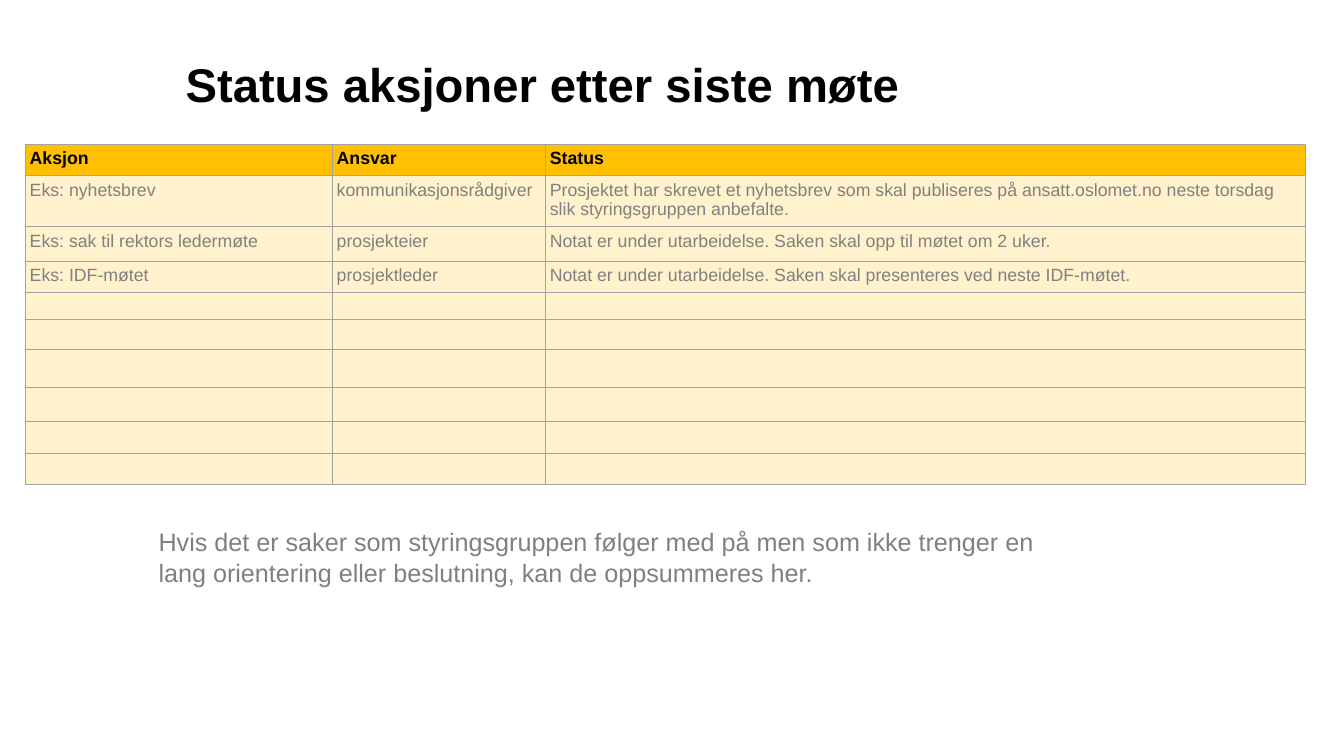
from lxml.etree import SubElement
from pptx import Presentation
from pptx.dml.color import RGBColor
from pptx.enum.text import MSO_ANCHOR
from pptx.oxml.ns import qn
from pptx.util import Pt

COLORS = {"ink": "000000", "gray": "808080", "rule": "A3A3A3",
          "head": "FFC001", "body": "FFF2CC"}
HEADS = ["Aksjon", "Ansvar", "Status"]
ACTIONS = [
    ["Eks: nyhetsbrev", "kommunikasjonsrådgiver",
     "Prosjektet har skrevet et nyhetsbrev som skal publiseres på "
     "ansatt.oslomet.no neste torsdag slik styringsgruppen anbefalte."],
    ["Eks: sak til rektors ledermøte", "prosjekteier",
     "Notat er under utarbeidelse. Saken skal opp til møtet om 2 uker."],
    ["Eks: IDF-møtet", "prosjektleder",
     "Notat er under utarbeidelse. Saken skal presenteres ved neste IDF-møtet."],
]
WIDTHS = [312, 216.7, 772]
HEIGHTS = [31.7, 32.4, 35.3, 31, 28.1, 30.2, 38.2, 35.3, 31.7, 31.7]


def color(name):
    return RGBColor.from_string(COLORS[name])


class Page:
    font = "Arial"
    inset = 4.32
    rule = 1

    def __init__(self, slide):
        self.slide = slide

    def style(self, par, size, ink, bold=False, lead=None):
        par.font.name = self.font
        par.font.size = Pt(size)
        par.font.bold = bold
        par.font.color.rgb = color(ink)
        if lead:
            par.line_spacing = lead

    def pad(self, item, size):
        """Set the same inner margin on all four sides."""
        item.margin_left = item.margin_right = Pt(size)
        item.margin_top = item.margin_bottom = Pt(size)

    def text(self, box, words, size, ink, bold=False, lead=None, pad=None,
             anchor=MSO_ANCHOR.TOP):
        frame = self.slide.shapes.add_textbox(*map(Pt, box)).text_frame
        frame.word_wrap = True
        frame.vertical_anchor = anchor
        if pad is not None:
            self.pad(frame, pad)
        frame.text = words
        self.style(frame.paragraphs[0], size, ink, bold, lead)

    def border(self, cell):
        props = cell._tc.get_or_add_tcPr()
        for spot, side in enumerate(("lnL", "lnR", "lnT", "lnB")):
            line = props.makeelement(qn(f"a:{side}"), w=str(Pt(self.rule)))
            fill = SubElement(line, qn("a:solidFill"))
            SubElement(fill, qn("a:srgbClr"), val=COLORS["rule"])
            props.insert(spot, line)

    def cell(self, cell, words, head):
        self.pad(cell, self.inset)
        cell.fill.solid()
        cell.fill.fore_color.rgb = color("head" if head else "body")
        self.border(cell)
        cell.text = words
        self.style(cell.text_frame.paragraphs[0], 18 if words else 12,
                   "ink" if head else "gray", head)

    def table(self, left, top, widths, heights, rows):
        """Fill the grid from the top; rows without words stay empty."""
        box = map(Pt, (left, top, sum(widths), sum(heights)))
        table = self.slide.shapes.add_table(len(heights), len(widths), *box).table
        for col, width in zip(table.columns, widths):
            col.width = Pt(width)
        for row, height in zip(table.rows, heights):
            row.height = Pt(height)
        for r in range(len(heights)):
            for c in range(len(widths)):
                words = rows[r][c] if r < len(rows) else ""
                self.cell(table.cell(r, c), words, r == 0)


def main():
    deck = Presentation()
    deck.slide_width = Pt(1366)
    deck.slide_height = Pt(767.88)
    page = Page(deck.slides.add_slide(deck.slide_layouts[6]))
    page.text((188.64, 62.2, 1088, 52.56), "Status aksjoner etter siste møte",
              48, "ink", bold=True, lead=0.9, pad=0, anchor=MSO_ANCHOR.BOTTOM)
    page.table(25.92, 146.88, WIDTHS, HEIGHTS, [HEADS] + ACTIONS)
    page.text((154.08, 531.36, 933, 69),
              "Hvis det er saker som styringsgruppen følger med på men som ikke "
              "trenger en lang orientering eller beslutning, kan de oppsummeres her.",
              25.6, "gray")
    deck.save("out.pptx")


if __name__ == "__main__":
    main()
